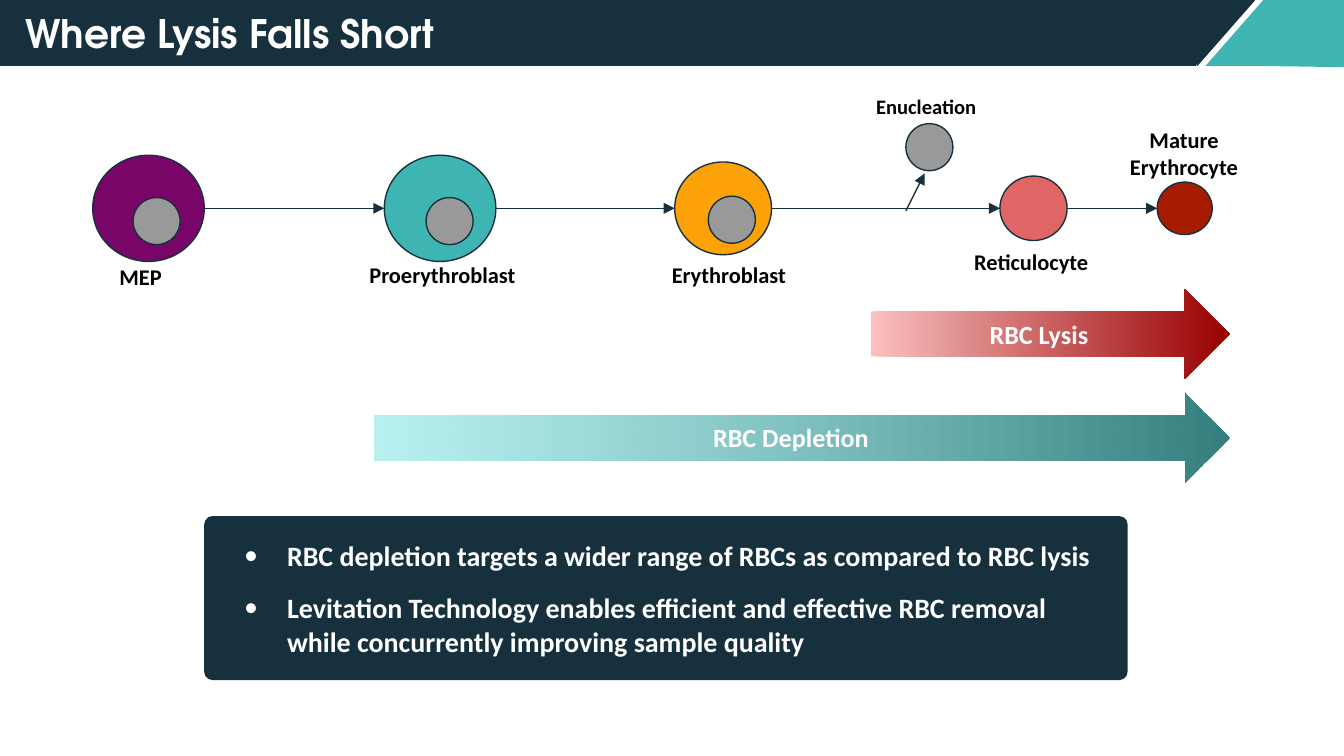
import pptx
import pptx.dml.color
import pptx.enum.shapes
import pptx.enum.text
import pptx.oxml
import pptx.oxml.ns
import pptx.util
from pptx.util import Inches

RGBColor = pptx.dml.color.RGBColor
SHAPE = pptx.enum.shapes.MSO_SHAPE
ALIGN = pptx.enum.text.PP_ALIGN
ANCHOR = pptx.enum.text.MSO_ANCHOR

NAVY = RGBColor(0x17, 0x30, 0x3E)
TEAL = RGBColor(0x3E, 0xB5, 0xB3)
PURPLE = RGBColor(0x79, 0x05, 0x69)
ORANGE = RGBColor(0xFC, 0xA1, 0x06)
PINK = RGBColor(0xE0, 0x66, 0x66)
RED = RGBColor(0xA6, 0x1C, 0x00)
GRAY = RGBColor(0x99, 0x99, 0x99)
PALE_RED = RGBColor(0xFA, 0xC0, 0xC0)
DARK_RED = RGBColor(0x98, 0x00, 0x00)
PALE_TEAL = RGBColor(0x95, 0xE9, 0xE8)
DARK_TEAL = RGBColor(0x34, 0x7F, 0x7E)
WHITE = RGBColor(0xFF, 0xFF, 0xFF)
BLACK = RGBColor(0x00, 0x00, 0x00)

TITLE = "Where Lysis Falls Short"
HEADER_HEIGHT = 0.49
CELL_AXIS = 1.55
NUCLEUS_SIZE = 0.35

CELLS = [
    (0.69, 0.83, 0.79, PURPLE),
    (2.86, 0.83, 0.79, TEAL),
    (5.02, 0.72, 0.69, ORANGE),
    (7.44, 0.5, 0.48, PINK),
    (8.61, 0.41, 0.39, RED),
]
NUCLEI = [(0.99, 1.47), (3.17, 1.47), (5.27, 1.46), (6.74, 0.92)]
LABELS = [
    ("MEP", 0.79, 1.86, 0.64, 0.4, 12, ALIGN.LEFT),
    ("Proerythroblast", 2.65, 1.84, 1.42, 0.4, 12, ALIGN.LEFT),
    ("Erythroblast", 4.9, 1.84, 1.25, 0.4, 12, ALIGN.LEFT),
    ("Reticulocyte", 7.15, 1.75, 1.07, 0.4, 12, ALIGN.LEFT),
    ("Mature Erythrocyte", 8.28, 0.84, 1.06, 0.61, 12, ALIGN.CENTER),
    ("Enucleation", 6.42, 0.6, 1.06, 0.39, 11, ALIGN.LEFT),
]
RANGES = [
    ("RBC Depletion", 2.79, 2.92, 6.36, PALE_TEAL, DARK_TEAL, 67),
    ("RBC Lysis", 6.48, 2.15, 2.67, PALE_RED, DARK_RED, 100),
]
CONCLUSIONS = [
    "RBC depletion targets a wider range of RBCs as compared to RBC lysis",
    "Levitation Technology enables efficient and effective RBC removal "
    "while concurrently improving sample quality",
]


def write(frame, *lines, size, color, font="Calibri", align=ALIGN.LEFT,
          anchor=ANCHOR.TOP, inset=(0.1, 0.1), bullet=None, gap=0):
    frame.word_wrap = True
    frame.auto_size = pptx.enum.text.MSO_AUTO_SIZE.NONE
    frame.vertical_anchor = anchor
    frame.margin_left = frame.margin_right = Inches(inset[0])
    frame.margin_top = frame.margin_bottom = Inches(inset[1])
    for index, line in enumerate(lines):
        paragraph = frame.add_paragraph() if index else frame.paragraphs[0]
        paragraph.alignment = align
        if index:
            paragraph.space_before = paragraph.space_after = pptx.util.Pt(gap)
        if bullet:
            properties = paragraph._p.get_or_add_pPr()
            properties.set("marL", str(Inches(0.5)))
            properties.set("indent", str(Inches(-0.32)))
            bullet_color = pptx.oxml.parse_xml(
                f'<a:buClr {pptx.oxml.ns.nsdecls("a")}><a:srgbClr val="{color}"/></a:buClr>')
            properties.append(bullet_color)
            for tag, attributes in (("a:buFont", {"typeface": font}),
                                    ("a:buChar", {"char": bullet})):
                properties.append(
                    properties.makeelement(pptx.oxml.ns.qn(tag), attributes))
        run = paragraph.add_run()
        run.text = line
        run.font.name = font
        run.font.size = pptx.util.Pt(size)
        run.font.bold = True
        run.font.color.rgb = color


def add_filled(slide, kind, left, top, width, height, color=None, outlined=False):
    shape = slide.shapes.add_shape(
        kind, Inches(left), Inches(top), Inches(width), Inches(height))
    shape.shadow.inherit = False
    if color is not None:
        shape.fill.solid()
        shape.fill.fore_color.rgb = color
    if outlined:
        shape.line.color.rgb = NAVY
        shape.line.width = pptx.util.Pt(0.75)
    else:
        shape.line.fill.background()
    return shape


def add_arrow(slide, start, end):
    arrow = slide.shapes.add_connector(
        pptx.enum.shapes.MSO_CONNECTOR.STRAIGHT, *map(Inches, start + end))
    arrow.line.color.rgb = NAVY
    arrow.line.width = pptx.util.Pt(0.75)
    line = arrow.line._get_or_add_ln()
    line.append(line.makeelement(pptx.oxml.ns.qn("a:tailEnd"), {"type": "triangle"}))
    properties = arrow._element.spPr
    properties.append(properties.makeelement(pptx.oxml.ns.qn("a:effectLst"), {}))


def add_header(slide):
    add_filled(slide, SHAPE.RECTANGLE, 0, 0, 8.9, HEADER_HEIGHT, NAVY)
    builder = slide.shapes.build_freeform(Inches(9.28), Inches(HEADER_HEIGHT))
    builder.add_line_segments(
        [(Inches(x), Inches(y)) for x, y in [(9.4, 0), (10, 0), (10, 0.5)]])
    corner = builder.convert_to_shape()
    corner.shadow.inherit = False
    corner.fill.solid()
    corner.fill.fore_color.rgb = TEAL
    corner.line.fill.background()
    add_filled(slide, SHAPE.ISOSCELES_TRIANGLE, 8.97, 0, 0.86, HEADER_HEIGHT, TEAL)
    slant = add_filled(slide, SHAPE.ISOSCELES_TRIANGLE, 8.48, 0, 0.86, HEADER_HEIGHT, NAVY)
    slant.rotation = 180

    title = slide.shapes.title
    title.left, title.top = Inches(0.12), Inches(0)
    title.width, title.height = Inches(8.81), Inches(HEADER_HEIGHT)
    write(title.text_frame, TITLE, size=21, color=WHITE, font="TeX Gyre Adventor",
          anchor=ANCHOR.MIDDLE, inset=(0.07, 0.04))
    slide.shapes._spTree.append(title._element)


def add_lineage(slide):
    for left, width, height, color in CELLS:
        add_filled(slide, SHAPE.OVAL, left, CELL_AXIS - height / 2, width, height,
                   color, outlined=True)
    for (left, width, *_), (next_left, *_) in zip(CELLS, CELLS[1:]):
        add_arrow(slide, (left + width, CELL_AXIS), (next_left, CELL_AXIS))
    add_arrow(slide, (6.74, 1.57), (6.88, 1.29))
    for left, top in NUCLEI:
        add_filled(slide, SHAPE.OVAL, left, top, NUCLEUS_SIZE, NUCLEUS_SIZE,
                   GRAY, outlined=True)
    for text, left, top, width, height, size, align in LABELS:
        label = slide.shapes.add_textbox(*map(Inches, (left, top, width, height)))
        write(label.text_frame, text, size=size, color=BLACK, align=align)


def add_ranges(slide):
    for text, left, top, width, start_color, end_color, opacity in RANGES:
        band = add_filled(slide, SHAPE.RIGHT_ARROW, left, top, width, 0.67)
        band.fill.gradient()
        band.fill.gradient_angle = 0
        for stop, color in zip(band.fill.gradient_stops, (start_color, end_color)):
            stop.color.rgb = color
        if opacity < 100:
            tint = next(band._element.spPr.iter(pptx.oxml.ns.qn("a:srgbClr")))
            tint.append(tint.makeelement(
                pptx.oxml.ns.qn("a:alpha"), {"val": str(opacity * 1000)}))
        write(band.text_frame, text, size=14, color=WHITE, align=ALIGN.CENTER,
              anchor=ANCHOR.MIDDLE)


def main():
    deck = pptx.Presentation()
    deck.slide_width = Inches(10)
    deck.slide_height = deck.slide_width * 9 // 16
    slide = deck.slides.add_slide(deck.slide_layouts.get_by_name("Title Only"))
    add_header(slide)
    add_lineage(slide)
    add_ranges(slide)
    panel = add_filled(slide, SHAPE.ROUNDED_RECTANGLE, 1.52, 3.84, 6.87, 1.22, NAVY)
    panel.adjustments[0] = 0.05
    write(panel.text_frame, *CONCLUSIONS, size=15, color=WHITE,
          anchor=ANCHOR.MIDDLE, bullet="•", gap=10)
    deck.save("out.pptx")


if __name__ == "__main__":
    main()
